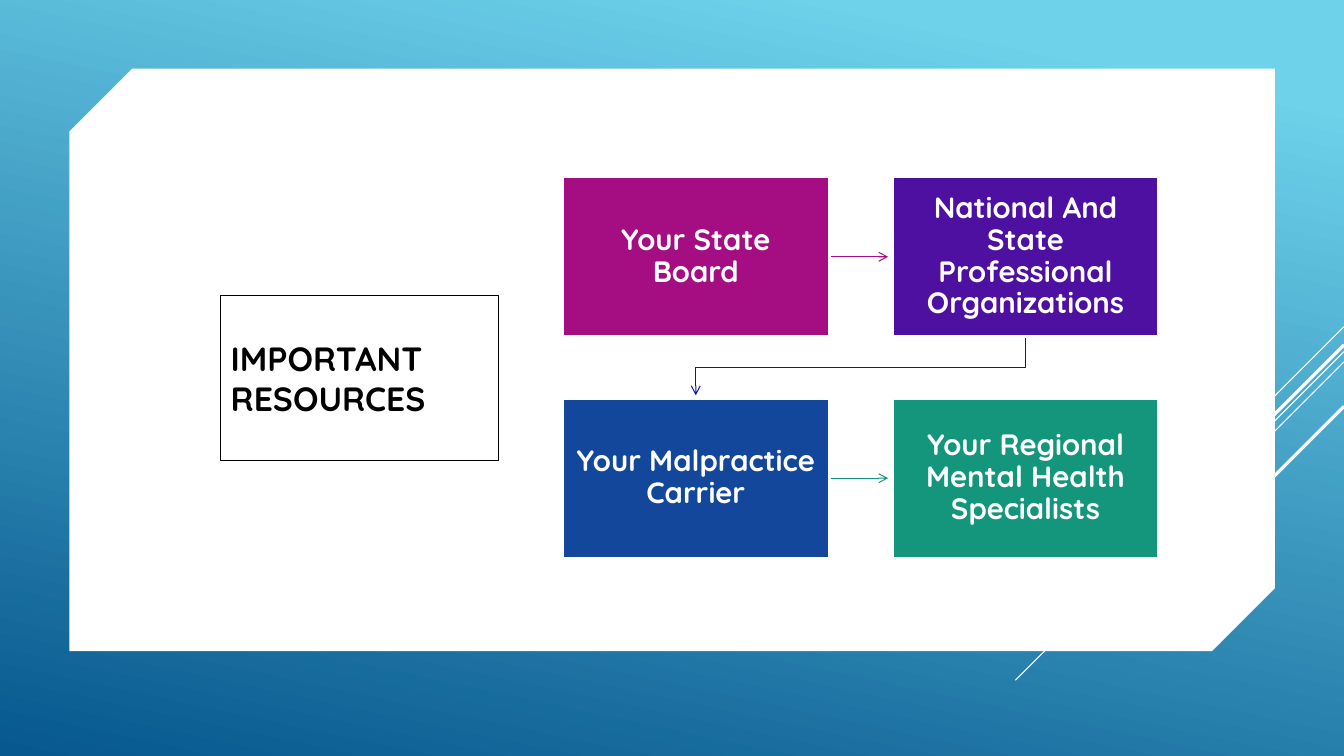
from pptx import Presentation
from pptx.dml.color import RGBColor
from pptx.enum.shapes import MSO_CONNECTOR, MSO_SHAPE
from pptx.enum.text import MSO_ANCHOR, PP_ALIGN
from pptx.oxml.ns import qn
from pptx.oxml.xmlchemy import OxmlElement
from pptx.util import Cm, Pt

WHITE = RGBColor(0xFF, 0xFF, 0xFF)
BLACK = RGBColor(0x00, 0x00, 0x00)
SKY = RGBColor(0x6E, 0xD2, 0xEB)
DEEP_BLUE = RGBColor(0x06, 0x58, 0x8E)
MAGENTA = RGBColor(0xA5, 0x0E, 0x82)
PURPLE = RGBColor(0x4D, 0x10, 0xA0)
INDIGO = RGBColor(0x13, 0x11, 0x9D)
BLUE = RGBColor(0x12, 0x47, 0x9B)
GREEN = RGBColor(0x14, 0x96, 0x7C)

SLIDE_WIDTH = 33.87
BOX_WIDTH, BOX_HEIGHT = 6.73, 4.04
BOX_LEFT, BOX_TOP = 14.17, 4.45
COLUMN_STEP, ROW_STEP = 8.31, 5.58
ARROW_LENGTH = 1.48


def style_line(shape, color, width, arrow=False):
    """Colour a line, drop its shadow and optionally end it in an open arrow."""
    shape.line.color.rgb = color
    shape.line.width = Pt(width)
    properties = shape._element.spPr
    if arrow:
        tail = OxmlElement("a:tailEnd")
        tail.set("type", "arrow")
        properties.find(qn("a:ln")).append(tail)
    if properties.find(qn("a:effectLst")) is None:
        properties.append(OxmlElement("a:effectLst"))


def write_text(shape, text, size, color, alignment):
    frame = shape.text_frame
    frame.word_wrap = True
    frame.vertical_anchor = MSO_ANCHOR.MIDDLE
    paragraph = frame.paragraphs[0]
    paragraph.alignment = alignment
    run = paragraph.add_run()
    run.text = text
    run.font.color.rgb = color
    font_format = {"name": "Quicksand", "size": Pt(size), "bold": True}
    for name, value in font_format.items():
        setattr(run.font, name, value)
    return frame


presentation = Presentation()
presentation.slide_width = Cm(SLIDE_WIDTH)
presentation.slide_height = Cm(19.05)
slide = presentation.slides.add_slide(presentation.slide_layouts[5])
shapes = slide.shapes

# Background gradient
background = slide.background.fill
background.gradient()
background.gradient_angle = 258
for stop, color, position in zip(background.gradient_stops, (SKY, DEEP_BLUE), (0.1, 1)):
    stop.color.rgb = color
    stop.position = position

# Diagonal streaks from the right edge: top, run, line width
streaks = [(8.23, 2.54, 0.75), (8.86, 8.28, 0.75), (9.12, 5.27, 0.75),
           (8.69, 4.85, 2.25), (10.24, 3.53, 2.25)]
for top, run, width in streaks:
    streak = shapes.add_connector(MSO_CONNECTOR.STRAIGHT, Cm(SLIDE_WIDTH), Cm(top),
                                  Cm(SLIDE_WIDTH - run), Cm(top + run))
    style_line(streak, WHITE, width)

# White panel
panel = shapes.add_shape(MSO_SHAPE.SNIP_2_DIAG_RECTANGLE,
                         Cm(1.75), Cm(1.73), Cm(30.38), Cm(14.68))
panel.adjustments[0] = 0.108
panel.adjustments[1] = 0
panel.shadow.inherit = False
panel.fill.solid()
panel.fill.fore_color.rgb = WHITE
panel.line.fill.background()

# Title
title = shapes.title
title_place = {"left": Cm(5.56), "top": Cm(7.44), "width": Cm(7.01), "height": Cm(4.17)}
for name, value in title_place.items():
    setattr(title, name, value)
style_line(title, BLACK, 0.75)
write_text(title, "IMPORTANT RESOURCES", 24, BLACK, PP_ALIGN.LEFT)
panel._element.addnext(title._element)

# Resource boxes, two to a row
resources = [("Your State Board", MAGENTA),
             ("National And State Professional Organizations", PURPLE),
             ("Your Malpractice Carrier", BLUE),
             ("Your Regional Mental Health Specialists", GREEN)]
margins = {"margin_left": Cm(0.34), "margin_right": Cm(0.34),
           "margin_top": Cm(0.36), "margin_bottom": Cm(0.36)}
boxes = []
for index, (text, color) in enumerate(resources):
    row, column = divmod(index, 2)
    box = shapes.add_shape(MSO_SHAPE.RECTANGLE,
                           Cm(BOX_LEFT + column * COLUMN_STEP), Cm(BOX_TOP + row * ROW_STEP),
                           Cm(BOX_WIDTH), Cm(BOX_HEIGHT))
    box.fill.solid()
    box.fill.fore_color.rgb = color
    style_line(box, WHITE, 2.25)
    frame = write_text(box, text, 21, WHITE, PP_ALIGN.CENTER)
    frame.paragraphs[0].line_spacing = 0.9
    for name, value in margins.items():
        setattr(frame, name, value)
    boxes.append(box)

# Arrows run beneath the white box outlines
state_board, organizations, carrier, specialists = boxes
for box, color in ((state_board, MAGENTA), (carrier, GREEN)):
    right, middle = box.left + box.width, box.top + box.height // 2
    arrow = shapes.add_connector(MSO_CONNECTOR.STRAIGHT, right, middle,
                                 right + Cm(ARROW_LENGTH), middle)
    arrow.begin_connect(box, 3)
    style_line(arrow, color, 0.75, arrow=True)
    state_board._element.addprevious(arrow._element)

start_x = organizations.left + organizations.width // 2
end_x = carrier.left + carrier.width // 2
builder = shapes.build_freeform(start_x, organizations.top + organizations.height)
builder.add_line_segments([(start_x, Cm(9.27)), (end_x, Cm(9.27)), (end_x, Cm(9.96))],
                          close=False)
bent_arrow = builder.convert_to_shape()
bent_arrow.fill.background()
style_line(bent_arrow, INDIGO, 0.75, arrow=True)
state_board._element.addprevious(bent_arrow._element)

presentation.save("out.pptx")
